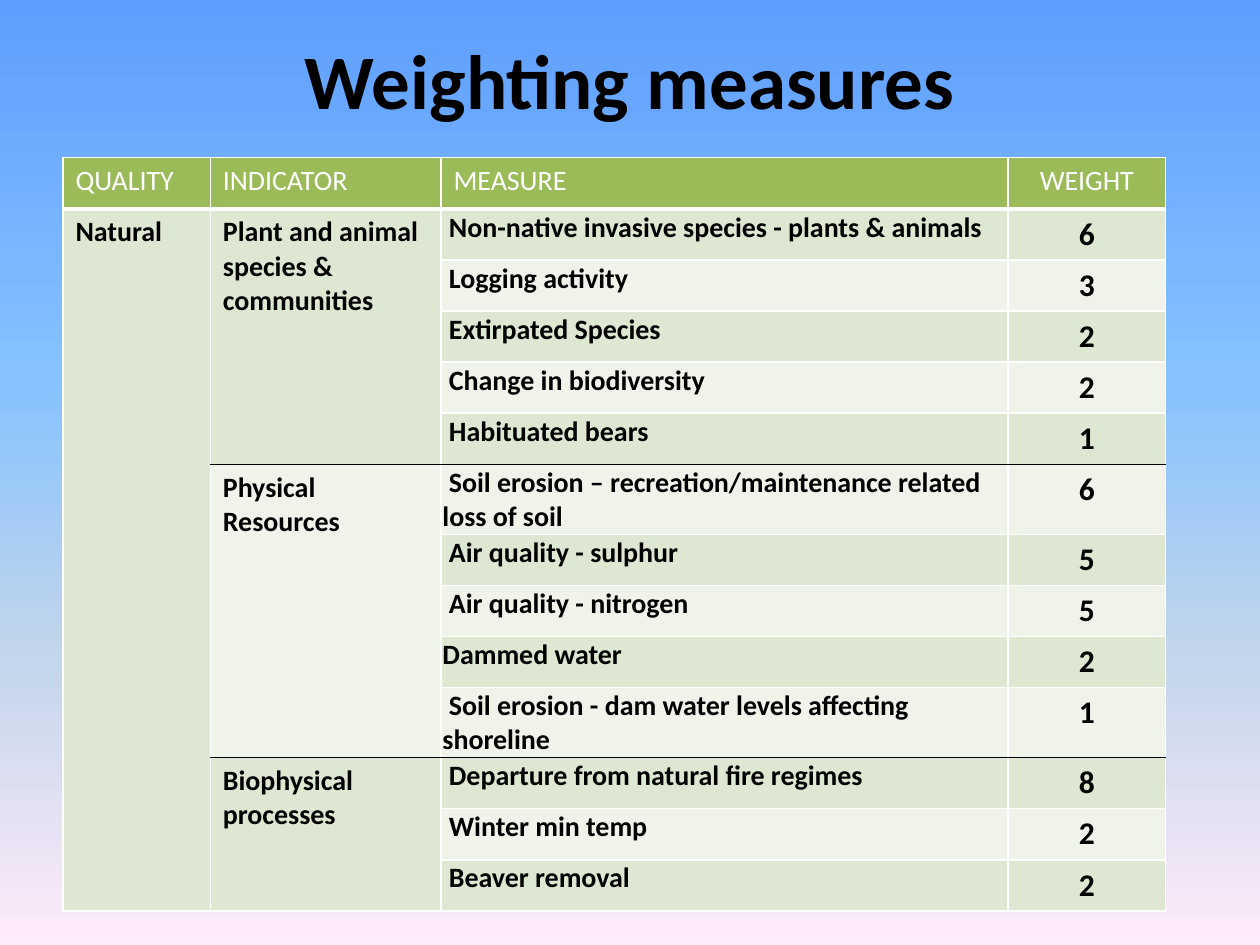
from copy import deepcopy

from lxml.etree import SubElement
from pptx import Presentation
from pptx.dml.color import RGBColor
from pptx.enum.text import MSO_ANCHOR as Anchor, PP_ALIGN as Align
from pptx.oxml.ns import qn
from pptx.util import Cm, Pt

BLACK = RGBColor(0x00, 0x00, 0x00)
WHITE = RGBColor(0xFF, 0xFF, 0xFF)
GREEN = RGBColor(0x9B, 0xBB, 0x59)
BANDS = (RGBColor(0xEF, 0xF3, 0xEA), RGBColor(0xDE, 0xE7, 0xD1))
SKY = (
    (0, RGBColor(0x5E, 0x9E, 0xFF)),
    (0.4, RGBColor(0x85, 0xC2, 0xFF)),
    (0.7, RGBColor(0xC4, 0xD6, 0xEB)),
    (1, RGBColor(0xFF, 0xEB, 0xFA)),
)

TITLE = {"name": "Calibri", "size": Pt(44), "bold": True}
HEADER = {"name": "Calibri", "size": Pt(16), "bold": False}
LABEL = {"name": "Calibri", "size": Pt(16), "bold": True}
WEIGHT = {"name": "Calibri", "size": Pt(18), "bold": True}
MEASURE_MARGINS = {
    "margin_left": Cm(0.03),
    "margin_top": Cm(0.03),
    "margin_right": Cm(0.03),
    "margin_bottom": Cm(0),
}

HEADINGS = ("QUALITY", "INDICATOR", "MEASURE", "WEIGHT")
COLUMN_WIDTHS = (2.97, 4.65, 11.43, 3.18)
ROW_HEIGHT = 1.03
FIRST_LINE_INDENT = 0.13
QUALITY = "Natural"
FLUSH_MEASURE = "Dammed water"
INDICATORS = {
    "Plant and animal species & communities": (
        ("Non-native invasive species - plants & animals", 6),
        ("Logging activity", 3),
        ("Extirpated Species", 2),
        ("Change in biodiversity", 2),
        ("Habituated bears", 1),
    ),
    "Physical Resources": (
        ("Soil erosion – recreation/maintenance related loss of soil", 6),
        ("Air quality - sulphur", 5),
        ("Air quality - nitrogen", 5),
        (FLUSH_MEASURE, 2),
        ("Soil erosion - dam water levels affecting shoreline", 1),
    ),
    "Biophysical processes": (
        ("Departure from natural fire regimes", 8),
        ("Winter min temp", 2),
        ("Beaver removal", 2),
    ),
}


def apply_format(target, values):
    """Set every attribute named in a dict of format values."""
    for name, value in values.items():
        setattr(target, name, value)


def paint_background(page):
    """Fill the page with the vertical sky gradient."""
    fill = page.background.fill
    fill.gradient()
    fill.gradient_angle = 270
    stop_list = page.element.find(".//" + qn("a:gsLst"))
    while len(stop_list) < len(SKY):
        stop_list.append(deepcopy(stop_list[0]))
    for stop, (position, color) in zip(fill.gradient_stops, SKY):
        stop.position = position
        stop.color.rgb = color


def write_text(frame, text, font, color=BLACK, align=Align.LEFT):
    """Write one formatted paragraph and return it."""
    para = frame.paragraphs[0]
    para.alignment = align
    span = para.add_run()
    span.text = text
    apply_format(span.font, font)
    span.font.color.rgb = color
    return para


def add_title(page, text):
    """Place and format the title placeholder."""
    box = page.shapes.title
    apply_format(box, {"left": Cm(1.27), "top": Cm(0), "width": Cm(22.86), "height": Cm(3.18)})
    box.text_frame.vertical_anchor = Anchor.MIDDLE
    write_text(box.text_frame, text, TITLE, align=Align.CENTER)


def add_border(cell, side, color, width):
    """Draw one side of a cell border."""
    properties = cell._tc.get_or_add_tcPr()
    line = SubElement(properties, qn(f"a:ln{side}"), w=str(Pt(width)))
    solid = SubElement(line, qn("a:solidFill"))
    SubElement(solid, qn("a:srgbClr"), val=str(color))


def style_cells(table, group_starts):
    """Give all cells their borders and banded fills."""
    band = GREEN
    for row_index, row in enumerate(table.rows):
        for column_index, cell in enumerate(row.cells):
            grouped = column_index > 0
            top = BLACK if grouped and row_index in group_starts else WHITE
            bottom = BLACK if grouped and row_index + 1 in group_starts else WHITE
            add_border(cell, "L", WHITE, 1)
            add_border(cell, "R", WHITE, 1)
            add_border(cell, "T", top, 1)
            add_border(cell, "B", bottom, 1 if row_index else 3)
            if row_index:
                band = BANDS[row_index % 2]
            cell.fill.solid()
            cell.fill.fore_color.rgb = band


def add_label(table, text, first, last, column):
    """Write a label in a cell merged over several rows."""
    cell = table.cell(first, column)
    cell.merge(table.cell(last, column))
    for row in range(first, last + 1):
        fill = table.cell(row, column).fill
        fill.solid()
        fill.fore_color.rgb = BANDS[first % 2]
    write_text(cell.text_frame, text, LABEL)


def add_measure(table, row, measure, weight):
    """Write a measure and its weight in one row."""
    cell = table.cell(row, 2)
    apply_format(cell, MEASURE_MARGINS)
    para = write_text(cell.text_frame, measure, LABEL)
    if measure != FLUSH_MEASURE:
        properties = para._p.get_or_add_pPr()
        properties.set("marL", "0")
        properties.set("indent", str(Cm(FIRST_LINE_INDENT)))
    write_text(table.cell(row, 3).text_frame, str(weight), WEIGHT, align=Align.CENTER)


def add_weight_table(page):
    """Build the table of indicators, measures and weights."""
    row_count = 1 + sum(len(measures) for measures in INDICATORS.values())
    table = page.shapes.add_table(
        row_count, len(HEADINGS), Cm(1.27), Cm(3.18),
        Cm(sum(COLUMN_WIDTHS)), Cm(ROW_HEIGHT * row_count),
    ).table
    for column, width in zip(table.columns, COLUMN_WIDTHS):
        column.width = Cm(width)
    for row in table.rows:
        row.height = Cm(ROW_HEIGHT)

    starts, row = [], 1
    for measures in INDICATORS.values():
        starts.append(row)
        row += len(measures)
    style_cells(table, starts[1:])

    for column, heading in enumerate(HEADINGS):
        align = Align.CENTER if heading == "WEIGHT" else Align.LEFT
        write_text(table.cell(0, column).text_frame, heading, HEADER, WHITE, align)
    add_label(table, QUALITY, 1, row_count - 1, 0)
    for start, (indicator, measures) in zip(starts, INDICATORS.items()):
        add_label(table, indicator, start, start + len(measures) - 1, 1)
        for row, (measure, weight) in enumerate(measures, start):
            add_measure(table, row, measure, weight)


def main():
    """Build the deck and save it."""
    deck = Presentation()
    apply_format(deck, {"slide_width": Cm(25.4), "slide_height": Cm(19.05)})
    page = deck.slides.add_slide(deck.slide_layouts[5])
    paint_background(page)
    add_title(page, "Weighting measures")
    add_weight_table(page)
    deck.save("out.pptx")


if __name__ == "__main__":
    main()
